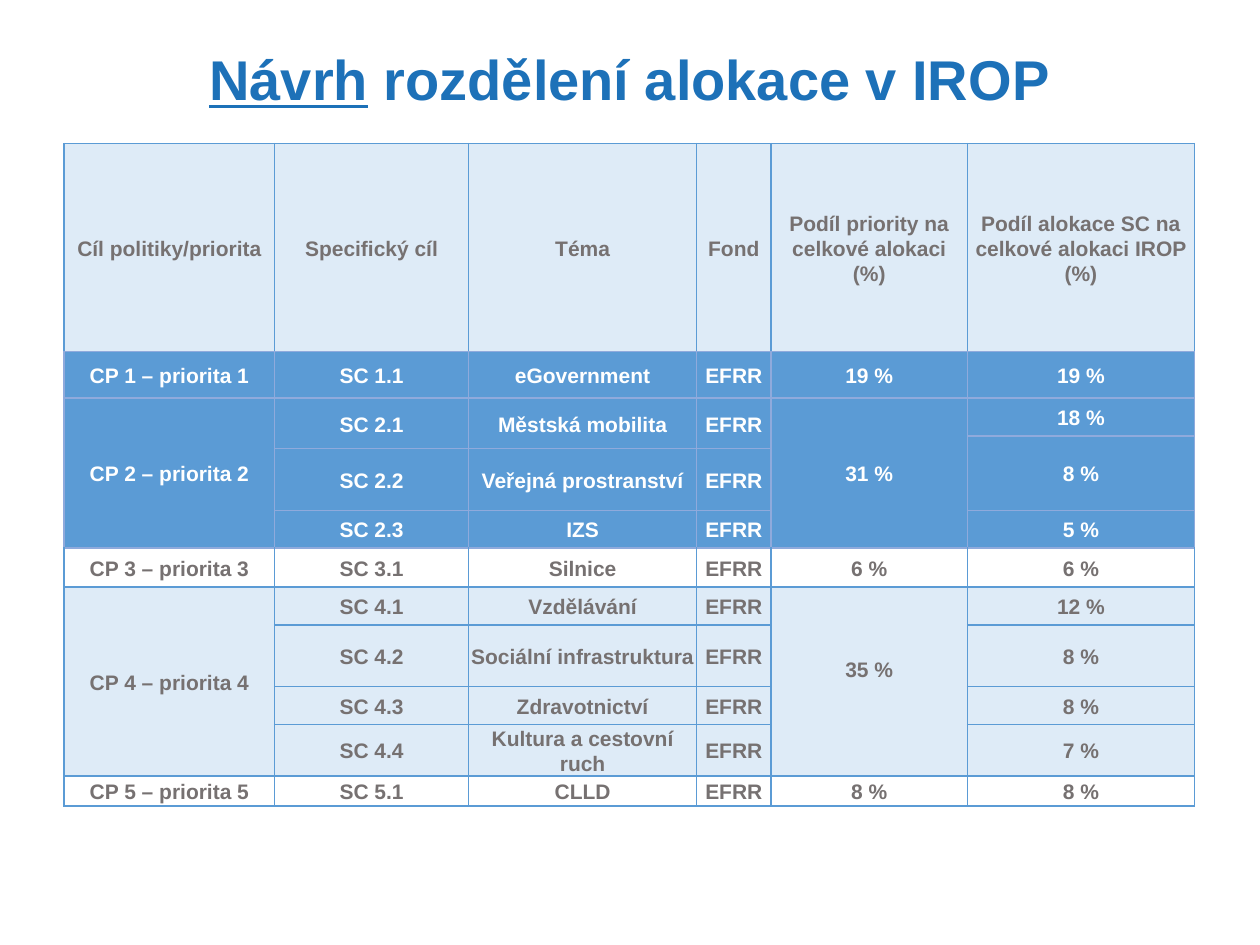
from lxml.etree import SubElement
from pptx import Presentation
from pptx.dml.color import RGBColor
from pptx.enum.text import MSO_ANCHOR as Anchor, PP_ALIGN as Align
from pptx.oxml.ns import qn
from pptx.util import Inches, Pt

TITLE_BLUE = RGBColor(0x1D, 0x71, 0xB8)
GREY = RGBColor(0x76, 0x71, 0x71)
WHITE = RGBColor(0xFF, 0xFF, 0xFF)
BLUE = RGBColor(0x5B, 0x9B, 0xD5)
PALE = RGBColor(0xDE, 0xEB, 0xF7)
SOFT_BLUE = RGBColor(0x8F, 0xAA, 0xDC)

TITLE = [("Návrh", True), (" rozdělení alokace v IROP", False)]
COLUMNS = [1.67, 1.54, 1.81, 0.59, 1.56, 1.8]
PALE_STYLE = (PALE, GREY, BLUE)
BLUE_STYLE = (BLUE, WHITE, SOFT_BLUE)
WHITE_STYLE = (WHITE, GREY, BLUE)
MERGED = None

ROWS = [
    (1.65, PALE_STYLE, ["Cíl politiky/priorita", "Specifický cíl", "Téma", "Fond",
                        "Podíl priority na celkové alokaci\n(%)",
                        "Podíl alokace SC na celkové alokaci IROP (%)"]),
    (0.37, BLUE_STYLE, ["CP 1 – priorita 1", "SC 1.1", "eGovernment", "EFRR", "19 %", "19 %"]),
    (0.3, BLUE_STYLE, ["CP 2 – priorita 2", "SC 2.1", "Městská mobilita", "EFRR", "31 %", "18 %"]),
    (0.1, BLUE_STYLE, [MERGED, MERGED, MERGED, MERGED, MERGED, "8 %"]),
    (0.49, BLUE_STYLE, [MERGED, "SC 2.2", "Veřejná prostranství", "EFRR", MERGED, MERGED]),
    (0.3, BLUE_STYLE, [MERGED, "SC 2.3", "IZS", "EFRR", MERGED, "5 %"]),
    (0.31, WHITE_STYLE, ["CP 3 – priorita 3", "SC 3.1", "Silnice", "EFRR", "6 %", "6 %"]),
    (0.3, PALE_STYLE, ["CP 4 – priorita 4", "SC 4.1", "Vzdělávání", "EFRR", "35 %", "12 %"]),
    (0.49, PALE_STYLE, [MERGED, "SC 4.2", "Sociální infrastruktura", "EFRR", MERGED, "8 %"]),
    (0.3, PALE_STYLE, [MERGED, "SC 4.3", "Zdravotnictví", "EFRR", MERGED, "8 %"]),
    (0.3, PALE_STYLE, [MERGED, "SC 4.4", "Kultura a cestovní ruch", "EFRR", MERGED, "7 %"]),
    (0.24, WHITE_STYLE, ["CP 5 – priorita 5", "SC 5.1", "CLLD", "EFRR", "8 %", "8 %"]),
]
RAISED = {"35 %": 0.2}


def apply(target, values):
    for name, value in values.items():
        setattr(target, name, value)


def set_font(font, size, color, underline=False):
    apply(font, dict(name="Arial", size=Pt(size), bold=True, underline=underline))
    font.color.rgb = color


def set_borders(cell, colors):
    properties = cell._tc.get_or_add_tcPr()
    for index, (side, color) in enumerate(colors.items()):
        line = SubElement(properties, qn(f"a:ln{side}"), w=str(Pt(1)))
        fill = SubElement(line, qn("a:solidFill"))
        SubElement(fill, qn("a:srgbClr"), val=str(color))
        properties.insert(index, line)


def add_title(page):
    box = page.shapes.title
    apply(box, dict(left=Inches(0.69), top=Inches(0.19), width=Inches(8.62), height=Inches(0.93)))
    box.text_frame.vertical_anchor = Anchor.MIDDLE
    para = box.text_frame.paragraphs[0]
    apply(para, dict(alignment=Align.CENTER, line_spacing=0.9))
    for text, underline in TITLE:
        span = para.add_run()
        span.text = text
        set_font(span.font, 32, TITLE_BLUE, underline)


def format_cell(cell, text, style, top, bottom):
    fill, ink, edge = style
    apply(cell, dict(vertical_anchor=Anchor.MIDDLE, margin_left=Inches(0.01),
                     margin_right=Inches(0.01), margin_top=Inches(0.01),
                     margin_bottom=Inches(RAISED.get(text, 0))))
    cell.fill.solid()
    cell.fill.fore_color.rgb = fill
    set_borders(cell, {"L": edge, "R": edge, "T": top, "B": bottom})
    cell.text = text or ""
    for para in cell.text_frame.paragraphs:
        apply(para, dict(alignment=Align.CENTER, line_spacing=1.07))
        set_font(para.font, 12, ink)
        for span in para.runs:
            set_font(span.font, 12, ink)


def shared_edge(first, second):
    return SOFT_BLUE if BLUE_STYLE in (first, second) else BLUE


def add_allocation_table(page):
    height = sum(row[0] for row in ROWS)
    frame = page.shapes.add_table(len(ROWS), len(COLUMNS), Inches(0.51), Inches(1.14),
                                  Inches(sum(COLUMNS)), Inches(height))
    table = frame.table
    apply(table, dict(first_row=False, horz_banding=False))
    for column, width in zip(table.columns, COLUMNS):
        column.width = Inches(width)
    styles = [row[1] for row in ROWS]
    for r, (height, style, texts) in enumerate(ROWS):
        table.rows[r].height = Inches(height)
        top = shared_edge(style, styles[max(r - 1, 0)])
        bottom = shared_edge(style, styles[min(r + 1, len(ROWS) - 1)])
        for c, text in enumerate(texts):
            format_cell(table.cell(r, c), text, style, top, bottom)
    for c in range(len(COLUMNS)):
        starts = [r for r, row in enumerate(ROWS) if row[2][c] is not MERGED]
        for start, end in zip(starts, starts[1:] + [len(ROWS)]):
            if end - start > 1:
                table.cell(start, c).merge(table.cell(end - 1, c))


def main():
    deck = Presentation()
    apply(deck, dict(slide_width=Inches(10), slide_height=Inches(7.5)))
    page = deck.slides.add_slide(deck.slide_layouts[5])
    add_title(page)
    add_allocation_table(page)
    deck.save("out.pptx")


if __name__ == "__main__":
    main()
